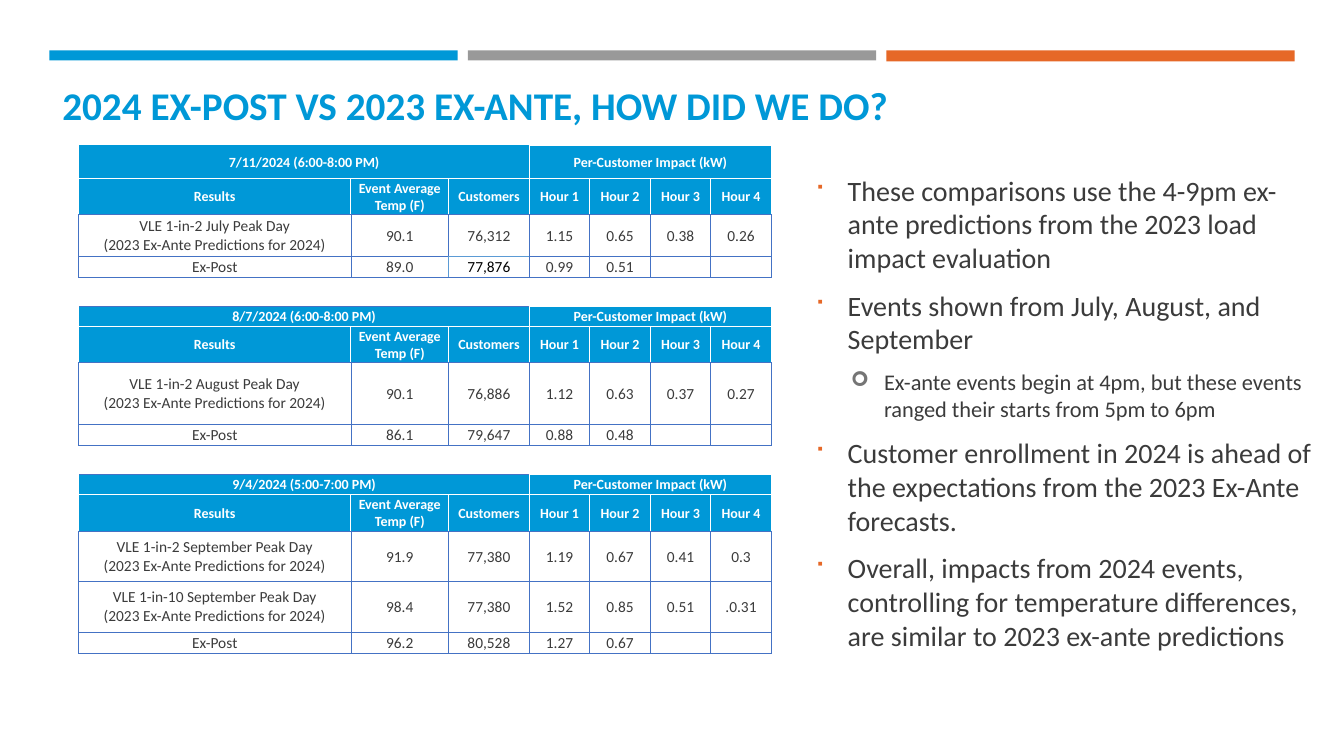
import pptx
import pptx.util
import pptx.dml.color
import pptx.enum.shapes
import pptx.enum.text
import pptx.oxml.ns
from lxml import etree

Inches, Pt = pptx.util.Inches, pptx.util.Pt
PP_ALIGN = pptx.enum.text.PP_ALIGN
ANCHOR = pptx.enum.text.MSO_ANCHOR

BLUE, GRAY, ORANGE = "0098D7", "999999", "E66827"
WHITE, DARK, BLACK = "FFFFFF", "3B3B3B", "000000"
GRID, LIGHT_GRID = "4472C4", "5B9BD5"
FONT = "Calibri"

TITLE = "2024 EX-POST VS 2023 EX-ANTE, HOW DID WE DO?"
BARS = [(BLUE, 0.1), (GRAY, 0.1), (ORANGE, 0.11)]
BULLETS = [
    (0, "These comparisons use the 4-9pm ex-ante predictions from the 2023 load impact evaluation"),
    (0, "Events shown from July, August, and September"),
    (1, "Ex-ante events begin at 4pm, but these events ranged their starts from 5pm to 6pm"),
    (0, "Customer enrollment in 2024 is ahead of the expectations from the 2023 Ex-Ante forecasts."),
    (0, "Overall, impacts from 2024 events, controlling for temperature differences, "
        "are similar to 2023 ex-ante predictions"),
]
LEVELS = [
    dict(size=20, indent=0.33, char="■", color=ORANGE),
    dict(size=16, indent=0.69, char="➢", color="757575"),
]

IMPACT = "Per-Customer Impact (kW)"
HEADINGS = ["Results", "Event Average Temp (F)", "Customers", "Hour 1", "Hour 2", "Hour 3", "Hour 4"]
PREDICTION = "\n(2023 Ex-Ante Predictions for 2024)"
EVENTS = [
    ("7/11/2024 (6:00-8:00 PM)", 0.33, [
        (0.41, ["VLE 1-in-2 July Peak Day" + PREDICTION, "90.1", "76,312", "1.15", "0.65", "0.38", "0.26"]),
        (0.21, ["Ex-Post", "89.0", "77,876", "0.99", "0.51", "", ""])]),
    ("8/7/2024 (6:00-8:00 PM)", 0.2, [
        (0.61, ["VLE 1-in-2 August Peak Day" + PREDICTION, "90.1", "76,886", "1.12", "0.63", "0.37", "0.27"]),
        (0.21, ["Ex-Post", "86.1", "79,647", "0.88", "0.48", "", ""])]),
    ("9/4/2024 (5:00-7:00 PM)", 0.2, [
        (0.5, ["VLE 1-in-2 September Peak Day" + PREDICTION, "91.9", "77,380", "1.19", "0.67", "0.41", "0.3"]),
        (0.5, ["VLE 1-in-10 September Peak Day" + PREDICTION, "98.4", "77,380", "1.52", "0.85", "0.51", ".0.31"]),
        (0.21, ["Ex-Post", "96.2", "80,528", "1.27", "0.67", "", ""])]),
]
COL_WIDTHS = [2.7, 0.97, 0.8] + [0.6] * 4
HEADING_HEIGHT, GAP_HEIGHT = 0.36, 0.29
FIRST_HOUR = 3
LIGHT_EDGES = {(2, 2): "B", (3, 1): "R", (3, 2): "LT"}
BLACK_CELL = (3, 2)
NO_GRID_STYLE = "{2D5ABB26-0587-4C30-8999-92F81FD0307C}"


def rgb(value):
    return pptx.dml.color.RGBColor.from_string(value)


def sub(parent, tag, **attrs):
    el = etree.SubElement(parent, pptx.oxml.ns.qn("a:" + tag))
    for name, value in attrs.items():
        el.set(name, str(value))
    return el


def add_run(p, text, size, color, bold=False):
    r = p.add_run()
    r.text = text
    r.font.name = FONT
    r.font.size = Pt(size)
    r.font.bold = bold
    r.font.color.rgb = rgb(color)


def add_box(slide, x, y, w, h, anchor):
    tf = slide.shapes.add_textbox(Inches(x), Inches(y), Inches(w), Inches(h)).text_frame
    tf.word_wrap = True
    tf.vertical_anchor = anchor
    return tf


def add_bullet(p, level, text):
    style = LEVELS[level]
    p.level = level
    pPr = p._p.get_or_add_pPr()
    pPr.set("marL", str(Inches(style["indent"])))
    pPr.set("indent", str(-Inches(0.33)))
    sub(sub(pPr, "buClr"), "srgbClr", val=style["color"])
    sub(pPr, "buSzPct", val=92000)
    sub(pPr, "buFont", typeface="Wingdings")
    sub(pPr, "buChar", char=style["char"])
    p.space_after = Pt(6)
    add_run(p, text, style["size"], DARK)


def set_edges(cell, edges):
    tcPr = cell._tc.get_or_add_tcPr()
    for side in "LRTB":
        if side in edges:
            color, width = edges[side]
            ln = sub(tcPr, "ln" + side, w=Pt(width))
            sub(sub(ln, "solidFill"), "srgbClr", val=color)


def fill_cell(cell, text, size, color, bold, fill, edges):
    set_edges(cell, edges)
    if fill:
        cell.fill.solid()
        cell.fill.fore_color.rgb = rgb(fill)
    else:
        cell.fill.background()
    cell.margin_left = cell.margin_right = cell.margin_top = Inches(0.01)
    cell.margin_bottom = 0
    cell.vertical_anchor = ANCHOR.MIDDLE
    tf = cell.text_frame
    for i, line in enumerate(text.split("\n")):
        p = tf.paragraphs[0] if i == 0 else tf.add_paragraph()
        p.alignment = PP_ALIGN.CENTER
        if line:
            add_run(p, line, size, color, bold)
        else:
            sub(p._p, "endParaRPr", sz=size * 100)


def table_rows():
    rows = []
    for date, height, results in EVENTS:
        if rows:
            rows.append(("gap", GAP_HEIGHT, [""] * 7))
        rows.append(("band", height, [date, "", "", IMPACT, "", "", ""]))
        rows.append(("heading", HEADING_HEIGHT, HEADINGS))
        rows += [("body", h, values) for h, values in results]
    return rows


def edges_for(kind, row, col):
    white, blue = (WHITE, 1), (GRID, 0.5)
    if kind == "gap":
        return {"T": blue, "B": white} if col >= FIRST_HOUR else {"T": blue}
    if kind == "band":
        return dict.fromkeys("LRTB" if col >= FIRST_HOUR else "LRB", white)
    if kind == "heading":
        return {**dict.fromkeys("LRT", white), "B": blue}
    light = LIGHT_EDGES.get((row, col), "")
    return {side: (LIGHT_GRID if side in light else GRID, 0.5) for side in "LRTB"}


def add_results_table(slide):
    rows = table_rows()
    frame = slide.shapes.add_table(len(rows), len(COL_WIDTHS), Inches(0.78), Inches(1.44),
                                   Inches(sum(COL_WIDTHS)), Inches(sum(r[1] for r in rows)))
    table = frame.table
    table.first_row = table.horz_banding = False
    table._tbl.tblPr.find(pptx.oxml.ns.qn("a:tableStyleId")).text = NO_GRID_STYLE
    for col, width in enumerate(COL_WIDTHS):
        table.columns[col].width = Inches(width)
    for row, (kind, height, values) in enumerate(rows):
        table.rows[row].height = Inches(height)
        header = kind in ("band", "heading")
        fill = BLUE if header else WHITE if kind == "gap" else None
        for col, text in enumerate(values):
            color = WHITE if header else BLACK if (row, col) == BLACK_CELL else DARK
            fill_cell(table.cell(row, col), text, 10 if header else 11, color, header,
                      fill, edges_for(kind, row, col))
        if kind == "band":
            table.cell(row, 0).merge(table.cell(row, FIRST_HOUR - 1))
            table.cell(row, FIRST_HOUR).merge(table.cell(row, 6))


def main():
    prs = pptx.Presentation()
    prs.slide_width, prs.slide_height = Inches(13.33), Inches(7.5)
    slide = prs.slides.add_slide(prs.slide_layouts[6])

    for i, (color, height) in enumerate(BARS):
        sp = slide.shapes.add_shape(pptx.enum.shapes.MSO_SHAPE.RECTANGLE, Inches(0.49 + 4.15 * i),
                                    Inches(0.5), Inches(4.05), Inches(height))
        sp.shadow.inherit = False
        sp.fill.solid()
        sp.fill.fore_color.rgb = rgb(color)
        sp.line.fill.background()

    tf = add_box(slide, 7.98, 1.67, 5.2, 5.03, ANCHOR.TOP)
    for i, (level, text) in enumerate(BULLETS):
        p = tf.add_paragraph() if i else tf.paragraphs[0]
        add_bullet(p, level, text)
        if i:
            p.space_before = Pt(LEVELS[level]["size"] * 0.2)

    tf = add_box(slide, 0.52, 0.61, 12.06, 0.71, ANCHOR.BOTTOM)
    add_run(tf.paragraphs[0], TITLE, 28, BLUE, True)

    add_results_table(slide)
    prs.save("out.pptx")


if __name__ == "__main__":
    main()
